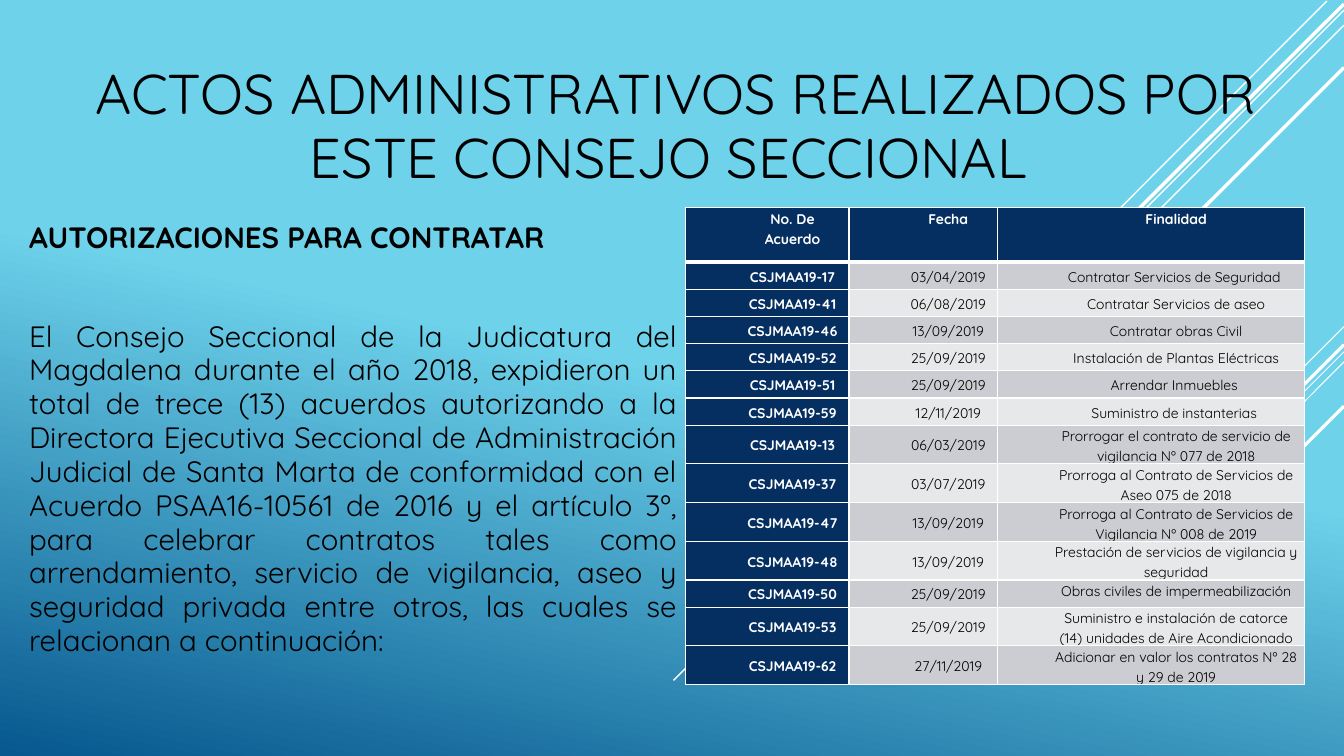
from lxml.etree import SubElement
from pptx import Presentation
from pptx.dml.color import RGBColor
from pptx.enum.shapes import MSO_CONNECTOR as CONN
from pptx.enum.text import MSO_ANCHOR as ANCHOR, PP_ALIGN as ALIGN
from pptx.oxml import parse_xml
from pptx.oxml.ns import nsdecls, qn
from pptx.util import Inches, Pt

THEME = {
    "font": "Quicksand",
    "sky": "6ED2EB", "ocean": "06588E", "navy": "052F61",
    "white": "FFFFFF", "black": "000000",
    "bands": ("CCCDD2", "E7E8EA"),
    "title": 40, "body": 21, "cell": 10,
}


def rgb(name):
    return RGBColor.from_string(THEME.get(name, name))


def write(p, text, size, color="black", bold=False, align=ALIGN.CENTER,
          spacing=0.96, after=0, indent=0):
    p.alignment = align
    p.line_spacing = spacing
    p.space_before = Pt(0)
    p.space_after = Pt(after)
    if indent:
        p._p.get_or_add_pPr().set("marL", str(Inches(indent)))
    r = p.add_run()
    r.text = text
    r.font.name = THEME["font"]
    r.font.size = Pt(THEME[size])
    r.font.bold = bold
    r.font.color.rgb = rgb(color)


prs = Presentation()
prs.slide_width, prs.slide_height = Inches(13.33), Inches(7.5)
s = prs.slides.add_slide(prs.slide_layouts[6])

fill = s.background.fill
fill.gradient()
fill.gradient_angle = 258
for stop, position, color in zip(fill.gradient_stops, (0.49, 1), ("sky", "ocean")):
    stop.position = position
    stop.color.rgb = rgb(color)

streaks = [
    (13.33, 3.24, 12.33, 4.24, 0.75),
    (13.33, 3.49, 10.07, 6.75, 0.75),
    (13.33, 3.59, 11.26, 5.67, 0.75),
    (13.33, 3.42, 11.42, 5.33, 2.25),
    (13.33, 4.03, 11.94, 5.42, 2.25),
    (13.16, 0.01, 9, 4.18, 1),
    (13.33, 0.1, 6.68, 6.75, 1),
    (13.33, 0.25, 7.91, 5.67, 1),
    (13.33, 0.04, 8.02, 5.34, 2.5),
    (13.33, 0.67, 8.58, 5.42, 2.5),
]
for *ends, width in streaks:
    streak = s.shapes.add_connector(CONN.STRAIGHT, *map(Inches, ends))
    streak.line.color.rgb = rgb("white")
    streak.line.width = Pt(width)
    SubElement(streak._element.spPr, qn("a:effectLst"))

title = s.shapes.add_textbox(Inches(0.3), Inches(0.35), Inches(12.81), Inches(1.6))
tf = title.text_frame
tf.word_wrap = True
tf.vertical_anchor = ANCHOR.BOTTOM
write(tf.paragraphs[0], "ACTOS ADMINISTRATIVOS REALIZADOS POR ESTE CONSEJO SECCIONAL ", "title")

body = s.shapes.add_textbox(Inches(0.19), Inches(2.15), Inches(6.62), Inches(4.93))
tf = body.text_frame
tf.word_wrap = True
write(tf.paragraphs[0], "AUTORIZACIONES PARA CONTRATAR", "body", bold=True,
      align=ALIGN.JUSTIFY, after=46)
write(tf.add_paragraph(),
      "El Consejo Seccional de la Judicatura del Magdalena durante el año 2018, "
      "expidieron un total de trece (13) acuerdos autorizando a la Directora Ejecutiva "
      "Seccional de Administración Judicial de Santa Marta de conformidad con el Acuerdo "
      "PSAA16-10561 de 2016 y el artículo 3º, para celebrar contratos tales como "
      "arrendamiento, servicio de vigilancia, aseo y seguridad privada entre otros, las "
      "cuales se relacionan a continuación:", "body", align=ALIGN.JUSTIFY)

agreements = [
    ("No. De Acuerdo", "Fecha", "Finalidad"),
    ("CSJMAA19-17", "03/04/2019", "Contratar Servicios de Seguridad "),
    ("CSJMAA19-41", "06/08/2019", "Contratar Servicios de aseo"),
    ("CSJMAA19-46", "13/09/2019", "Contratar obras Civil"),
    ("CSJMAA19-52", "25/09/2019", "Instalación de Plantas Eléctricas"),
    ("CSJMAA19-51", "25/09/2019", "Arrendar Inmuebles "),
    ("CSJMAA19-59", "12/11/2019", "Suministro de instanterias "),
    ("CSJMAA19-13", "06/03/2019", "Prorrogar el contrato de servicio de vigilancia Nº 077 de 2018"),
    ("CSJMAA19-37", "03/07/2019", "Prorroga al Contrato de Servicios de Aseo 075 de 2018"),
    ("CSJMAA19-47", "13/09/2019", "Prorroga al Contrato de Servicios de Vigilancia Nº 008 de 2019"),
    ("CSJMAA19-48", "13/09/2019", "Prestación de servicios de vigilancia y seguridad"),
    ("CSJMAA19-50", "25/09/2019", "Obras civiles de impermeabilización"),
    ("CSJMAA19-53", "25/09/2019", "Suministro e instalación de catorce (14) unidades de Aire Acondicionado"),
    ("CSJMAA19-62", "27/11/2019", "Adicionar en valor los contratos Nº 28 y 29 de 2019"),
]
first_top_row = 7
table = s.shapes.add_table(len(agreements), 3, Inches(6.8), Inches(2.06),
                           Inches(6.14), Inches(4.05)).table
table.first_row = table.horz_banding = False
for column, width in zip(table.columns, (1.62, 1.47, 3.05)):
    column.width = Inches(width)

for i, agreement in enumerate(agreements):
    table.rows[i].height = Inches(0.27 if i else 0.54)
    for j, text in enumerate(agreement):
        cell = table.cell(i, j)
        heading = i == 0 or j == 0
        at_top = i == 0 or (j == 2 and i >= first_top_row)
        cell.vertical_anchor = ANCHOR.TOP if at_top else ANCHOR.MIDDLE
        cell.margin_left = cell.margin_right = Inches(0.07)
        cell.margin_top = cell.margin_bottom = 0
        cell.fill.solid()
        cell.fill.fore_color.rgb = rgb("navy" if heading else THEME["bands"][(i - 1) % 2])
        write(cell.text_frame.paragraphs[0], text, "cell",
              color="white" if heading else "black", bold=heading, spacing=1.15, indent=0.5)
        tcPr = cell._tc.get_or_add_tcPr()
        for k, side in enumerate(("lnL", "lnR", "lnT", "lnB")):
            thick = (i == 0 and side == "lnB") or (i == 1 and side == "lnT")
            tcPr.insert(k, parse_xml(
                f'<a:{side} {nsdecls("a")} w="{Pt(3 if thick else 1)}"><a:solidFill>'
                f'<a:srgbClr val="{THEME["white"]}"/></a:solidFill></a:{side}>'))

prs.save("out.pptx")
